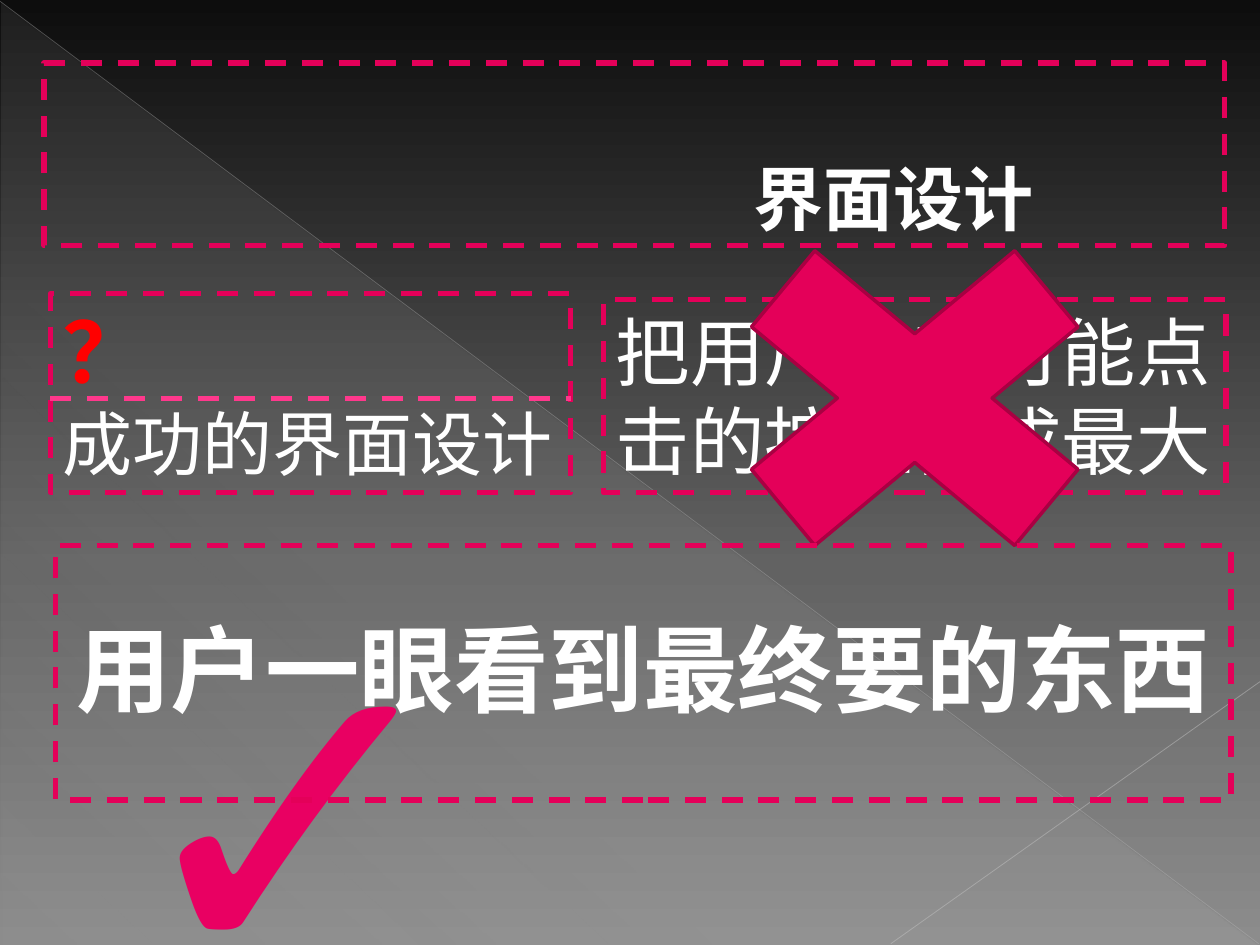
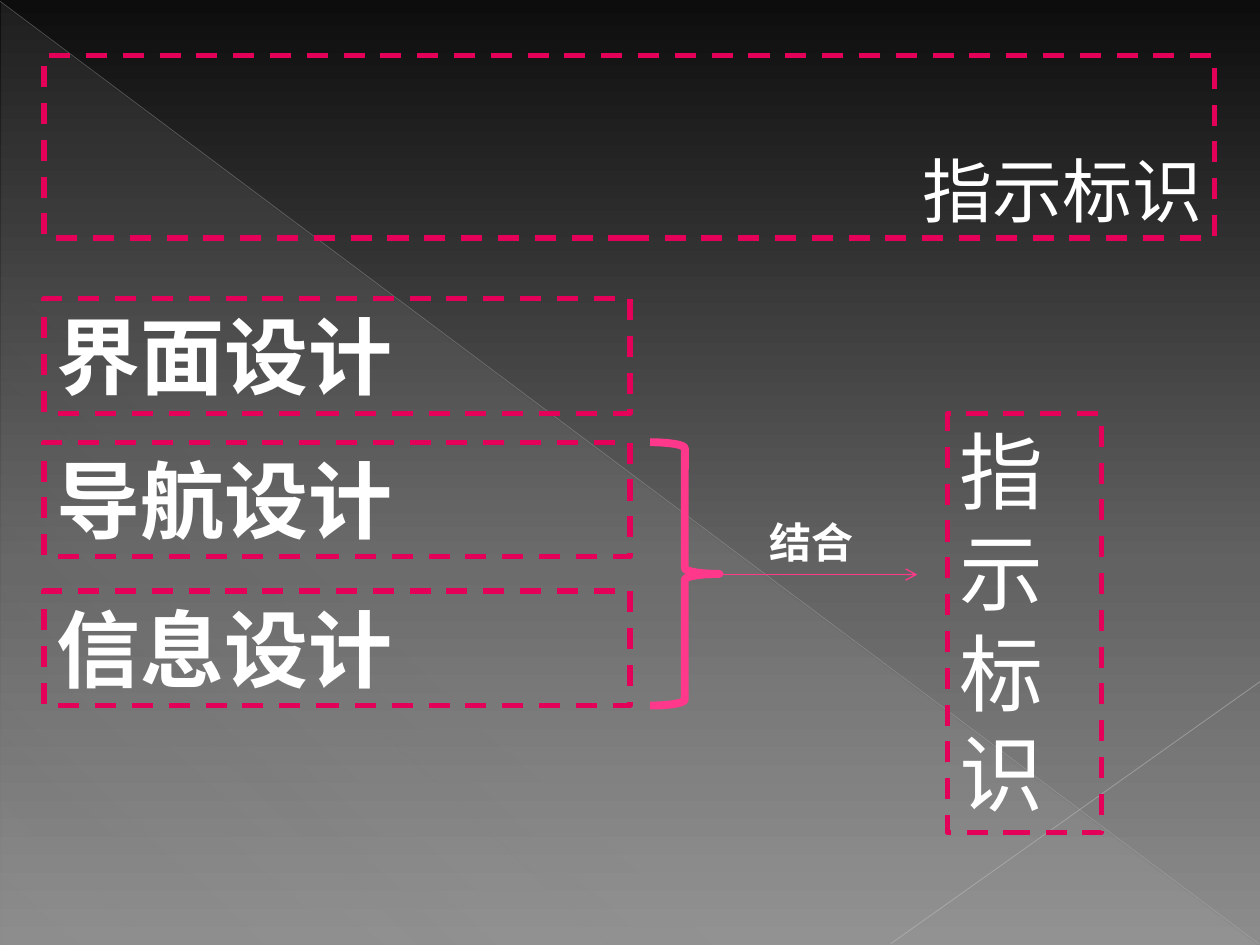
from dataclasses import dataclass

import pptx
import pptx.dml.color
import pptx.enum.dml
import pptx.enum.shapes
import pptx.enum.text
import pptx.oxml
import pptx.oxml.ns
import pptx.util
from pptx.util import Inches

COLORS = {
    "text": "FFFFFF", "frame": "E40059", "accent": "FF388C", "cross_edge": "A90042",
    "check": "E90062", "question": "FF0000", "facet": "D2D2D2",
    "long_edge": "BFBFBF", "short_edge": "C6C6C6",
}
BACKGROUND_STOPS = [(0, "0D0D0D", 100), (60, "626262", 100), (100, "8C8C8C", 100)]
FACET_STOPS = [(0, COLORS["facet"], 10), (70, COLORS["facet"], 8), (100, COLORS["facet"], 1)]
FONT = "League Spartan"
QUESTION_FONT = "Noto Sans CJK SC"
TITLE_ONLY_LAYOUT = 5

ALIGN = pptx.enum.text.PP_ALIGN
ANCHOR = pptx.enum.text.MSO_ANCHOR
SHAPE = pptx.enum.shapes.MSO_SHAPE
DASH = pptx.enum.dml.MSO_LINE.DASH
qn = pptx.oxml.ns.qn


@dataclass
class Area:
    left: float
    top: float
    width: float
    height: float

    def lengths(self) -> tuple:
        return tuple(Inches(n) for n in (self.left, self.top, self.width, self.height))


@dataclass
class Span:
    text: str
    size: float
    bold: bool = False
    color: str = "text"
    font: str = FONT


@dataclass
class Edge:
    start: tuple
    end: tuple
    color: str
    weight: float
    opacity: int = 100
    dashed: bool = False


# Shared drawing functions
def rgb(color: str):
    return pptx.dml.color.RGBColor.from_string(COLORS[color])


def child(parent, tag: str, **attributes):
    element = pptx.oxml.ns.qn(tag)
    made = parent.makeelement(element, {key: str(value) for key, value in attributes.items()})
    parent.append(made)
    return made


def set_gradient(owner, fill, stops: list, angle: float) -> None:
    fill.gradient()
    fill.gradient_angle = 360 - angle
    stop_list = owner.find(".//" + qn("a:gsLst"))
    for old_stop in list(stop_list):
        stop_list.remove(old_stop)
    for position, color, opacity in stops:
        stop = child(stop_list, "a:gs", pos=position * 1000)
        value = child(stop, "a:srgbClr", val=color)
        if opacity < 100:
            child(value, "a:alpha", val=opacity * 1000)


def set_line(line, color: str, weight: float, dashed: bool = False) -> None:
    line.color.rgb = rgb(color)
    line.width = pptx.util.Pt(weight)
    if dashed:
        line.dash_style = DASH


def add_edge(page, edge: Edge):
    ends = [Inches(n) for n in (*edge.start, *edge.end)]
    connector = page.shapes.add_connector(pptx.enum.shapes.MSO_CONNECTOR.STRAIGHT, *ends)
    set_line(connector.line, edge.color, edge.weight, edge.dashed)
    properties = connector._element.spPr
    if edge.opacity < 100:
        child(properties.find(".//" + qn("a:srgbClr")), "a:alpha", val=edge.opacity * 1000)
    child(properties, "a:effectLst")
    return connector


def add_symbol(page, kind, area: Area, line_color: str, weight: float, fill: str = ""):
    symbol = page.shapes.add_shape(kind, *area.lengths())
    symbol.shadow.inherit = False
    if fill:
        symbol.fill.solid()
        symbol.fill.fore_color.rgb = rgb(fill)
    else:
        symbol.fill.background()
    set_line(symbol.line, line_color, weight)
    return symbol


def write(box, spans: list, *, align=ALIGN.LEFT, anchor=ANCHOR.TOP,
          inset_top: float = 0.05, inset_right: float = 0.1) -> None:
    """Write one paragraph per span."""
    frame = box.text_frame
    frame.word_wrap = True
    frame.auto_size = pptx.enum.text.MSO_AUTO_SIZE.NONE
    frame.vertical_anchor = anchor
    frame.margin_left, frame.margin_right = Inches(0.1), Inches(inset_right)
    frame.margin_top, frame.margin_bottom = Inches(inset_top), Inches(0.05)
    for index, span in enumerate(spans):
        para = frame.paragraphs[0] if index == 0 else frame.add_paragraph()
        para.alignment = align
        run = para.add_run()
        run.text = span.text
        run.font.size = pptx.util.Pt(span.size)
        run.font.bold = span.bold
        run.font.color.rgb = rgb(span.color)
        run.font.name = span.font
        child(run.font._element, "a:ea", typeface=span.font)


def add_text(page, area: Area, spans: list, *, framed: bool = True, **text_format):
    box = page.shapes.add_textbox(*area.lengths())
    if framed:
        set_line(box.line, "frame", 3, dashed=True)
    write(box, spans, **text_format)
    return box


def add_page(deck, title: str, area: Area, *, bold: bool = False, inset_right: float = 0.1):
    page = deck.slides.add_slide(deck.slide_layouts[TITLE_ONLY_LAYOUT])
    box = page.shapes.title
    box.left, box.top, box.width, box.height = area.lengths()
    set_line(box.line, "frame", 3, dashed=True)
    write(box, [Span(title, 40, bold)], align=ALIGN.RIGHT, anchor=ANCHOR.BOTTOM,
          inset_right=inset_right)
    return page


def decorate_master(deck, page) -> None:
    """Draw the backdrop with the page's tools, then move it to the master."""
    master = deck.slide_master
    set_gradient(master.element, master.background.fill, BACKGROUND_STOPS, 90)
    facet = page.shapes.add_shape(SHAPE.RIGHT_TRIANGLE, *Area(0.01, 0.02, 9.98, 7.48).lengths())
    facet.shadow.inherit = False
    facet.line.fill.background()
    set_gradient(facet._element, facet.fill, FACET_STOPS, 133)
    long_edge = add_edge(page, Edge((0, 0.01), (9.99, 7.49), "long_edge", 0.39, 35))
    short_edge = add_edge(page, Edge((10, 5.41), (7.07, 7.49), "short_edge", 0.47, 45))
    tree = master.shapes._spTree
    for index, part in enumerate((facet, long_edge, short_edge)):
        part._element.find(".//" + qn("p:cNvPr")).set("id", str(101 + index))
        tree.insert(2 + index, part._element)


# Slide 1: interface design
def build_interface_page(deck):
    page = add_page(deck, "界面设计", Area(0.35, 0.5, 9.37, 1.45), bold=True, inset_right=1.52)
    add_text(page, Area(4.79, 2.38, 4.94, 1.53), [Span("把用户最有可能点击的按钮做成最大", 42.5)])
    add_text(page, Area(0.4, 2.33, 4.13, 1.58), [
        Span("？", 48, True, "question", QUESTION_FONT),
        Span("成功的界面设计", 40),
    ])
    add_edge(page, Edge((0.4, 3.16), (4.53, 3.16), "accent", 3, dashed=True))
    add_symbol(page, SHAPE.MATH_MULTIPLY, Area(5.25, 1.49, 4.02, 3.34), "cross_edge", 2, "frame")
    add_text(page, Area(0.45, 4.33, 3.74, 4.12), [Span("✓", 239, True, "check")],
             framed=False, align=ALIGN.CENTER)
    add_text(page, Area(0.44, 4.33, 9.33, 2.02), [Span("用户一眼看到最终要的东西", 54, True)],
             align=ALIGN.CENTER, inset_top=0.52)
    return page


# Slide 2: three kinds of design combine into signage
def build_signage_page(deck):
    page = add_page(deck, "指示标识", Area(0.35, 0.44, 9.29, 1.45))
    for name, top in (("界面设计", 2.37), ("导航设计", 3.51), ("信息设计", 4.69)):
        add_text(page, Area(0.35, top, 4.65, 0.91), [Span(name, 48, True)])
    add_text(page, Area(7.52, 3.28, 1.22, 3.33), [Span(letter, 48) for letter in "指示标识"])
    arrow = add_edge(page, Edge((5.71, 4.56), (7.28, 4.56), "accent", 0.75))
    child(arrow.line._get_or_add_ln(), "a:tailEnd", type="arrow")
    add_symbol(page, SHAPE.RIGHT_BRACE, Area(5.16, 3.51, 0.55, 2.09), "accent", 4.5)
    add_text(page, Area(5.73, 3.89, 1.42, 0.81), [Span("结合", 24, True)],
             framed=False, align=ALIGN.CENTER, anchor=ANCHOR.MIDDLE)
    return page


def main() -> None:
    deck = pptx.Presentation()
    deck.slide_width, deck.slide_height = Inches(10), Inches(7.5)
    first_page = build_interface_page(deck)
    build_signage_page(deck)
    decorate_master(deck, first_page)
    deck.save("out.pptx")


if __name__ == "__main__":
    main()
